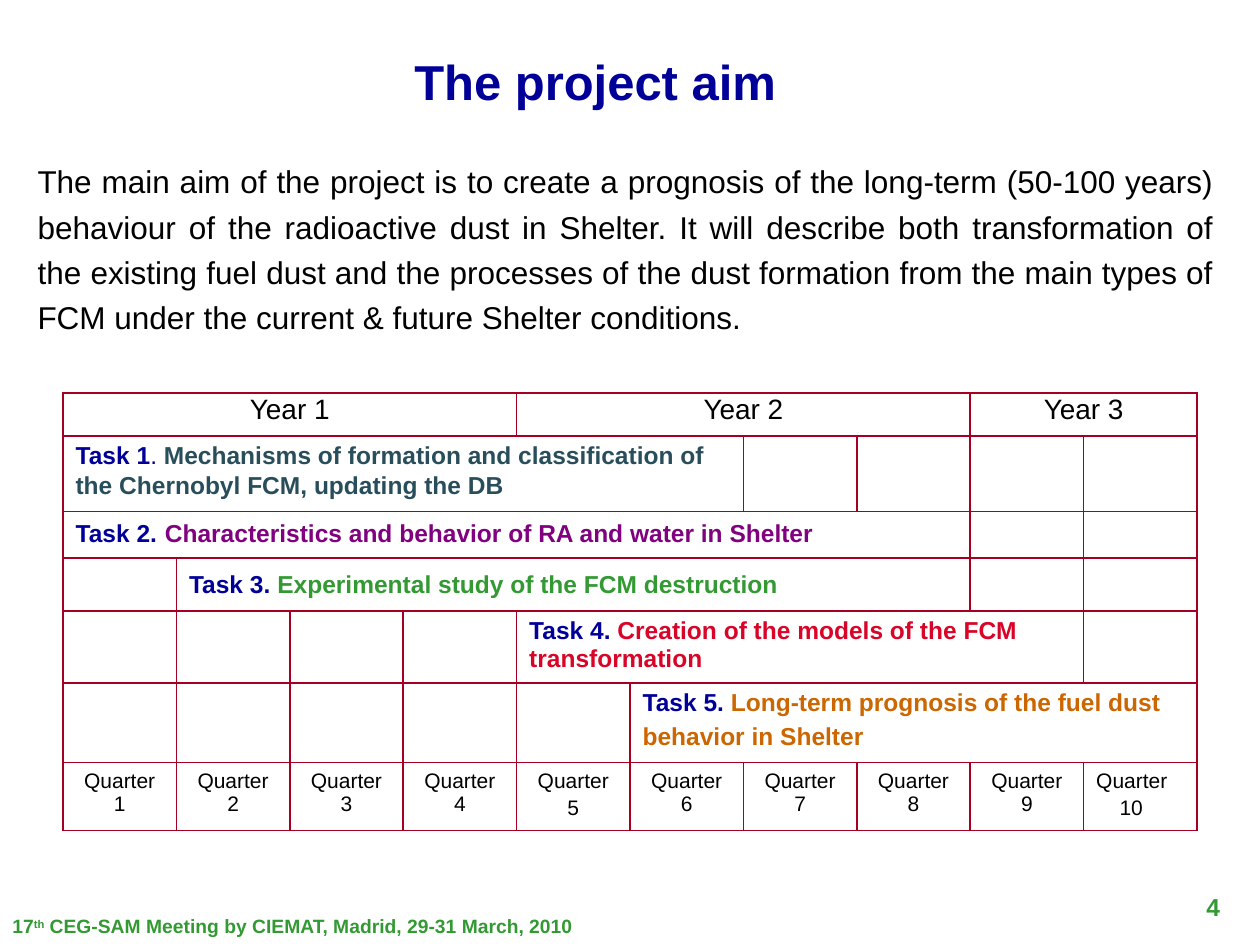
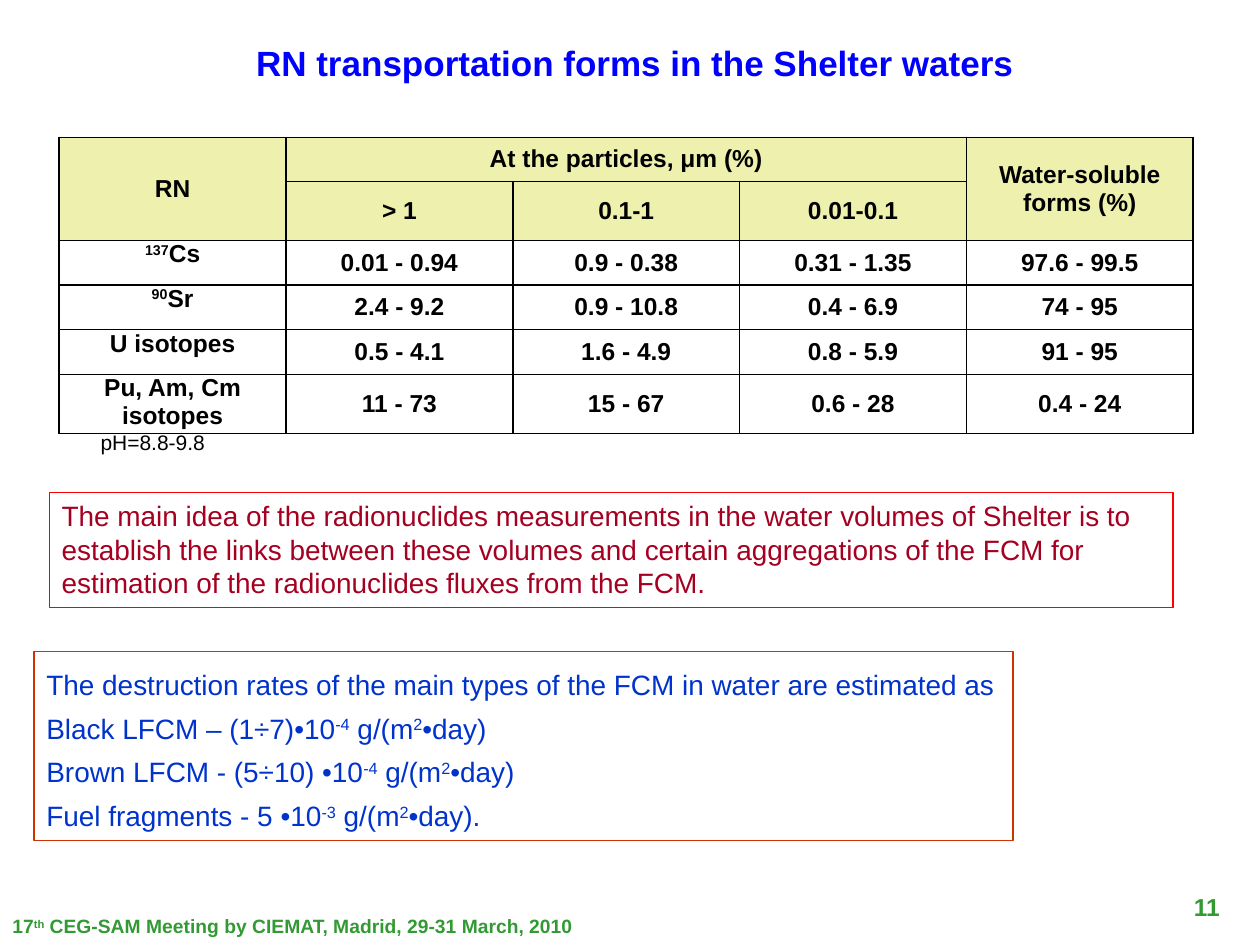
from typing import NamedTuple

from lxml import etree
from pptx import Presentation
from pptx.dml.color import RGBColor
from pptx.enum.shapes import MSO_SHAPE
from pptx.enum.text import MSO_ANCHOR, PP_ALIGN
from pptx.oxml.ns import qn
from pptx.util import Inches, Pt

RECTANGLE = MSO_SHAPE.RECTANGLE
TOP, MIDDLE = MSO_ANCHOR.TOP, MSO_ANCHOR.MIDDLE
LEFT, CENTER = PP_ALIGN.LEFT, PP_ALIGN.CENTER
RIGHT, JUSTIFY = PP_ALIGN.RIGHT, PP_ALIGN.JUSTIFY

BLACK = RGBColor(0x00, 0x00, 0x00)
NAVY = RGBColor(0x00, 0x00, 0x99)
BLUE = RGBColor(0x00, 0x00, 0xFF)
ROYAL = RGBColor(0x00, 0x33, 0xCC)
SLATE = RGBColor(0x29, 0x4E, 0x5B)
PURPLE = RGBColor(0x80, 0x00, 0x80)
GREEN = RGBColor(0x33, 0x99, 0x33)
CRIMSON = RGBColor(0xD9, 0x05, 0x28)
OCHRE = RGBColor(0xCC, 0x66, 0x00)
WINE = RGBColor(0xA5, 0x00, 0x21)
RED = RGBColor(0xFF, 0x00, 0x00)
RUST = RGBColor(0xCC, 0x33, 0x00)
CREAM = RGBColor(0xEE, 0xF0, 0xAE)

FONT = "Arial"
HAND_FONT = "Comic Neue"
UNIT = Inches(0.1)  # one column or row of the page grid
COLUMNS, ROWS = 100, 75
PARAGRAPH_GAP = 0.2  # share of the line height


class Box(NamedTuple):
    """Area of the page in grid columns and rows."""
    left: float
    top: float
    width: float
    height: float

    def area(self, left, top, width, height):
        return Box(self.left + left, self.top + top, width, height)

    def emu(self):
        return [round(length * UNIT) for length in self]


PAGE = Box(0, 0, COLUMNS, ROWS)


def space_before(paragraph, share):
    paragraph.space_before = Pt(0)
    spacing = paragraph._p.pPr.find(qn("a:spcBef"))
    spacing.remove(spacing[0])
    etree.SubElement(spacing, qn("a:spcPct")).set("val", str(round(share * 100000)))


def write(frame, paragraphs, align=LEFT, line=None, gap=None, **style):
    """Each paragraph is a string or a list of (text, style changes).

    Text between two carets is set as superscript.
    """
    for number, content in enumerate(paragraphs):
        paragraph = frame.add_paragraph() if number else frame.paragraphs[0]
        paragraph.alignment = align
        if line:
            paragraph.line_spacing = line
        if gap:
            space_before(paragraph, gap)
        pieces = [(content, {})] if isinstance(content, str) else content
        for text, changes in pieces:
            look = {"font": FONT, "size": 14, "color": BLACK, "bold": False,
                    **style, **changes}
            for index, piece in enumerate(text.split("^")):
                if not piece:
                    continue
                run = paragraph.add_run()
                run.text = piece
                run.font.name = look["font"]
                run.font.size = Pt(look["size"])
                run.font.bold = look["bold"]
                run.font.color.rgb = look["color"]
                if index % 2:
                    run.font._element.set("baseline", "30000")


def add_text(slide, box, paragraphs, wrap=True, **style):
    frame = slide.shapes.add_textbox(*box.emu()).text_frame
    frame.word_wrap = wrap
    write(frame, paragraphs, **style)


def add_framed_text(slide, box, paragraphs, outline, wrap=True, **style):
    frame_shape = slide.shapes.add_shape(RECTANGLE, *box.emu())
    frame_shape.shadow.inherit = False
    frame_shape.fill.background()
    frame_shape.line.color.rgb = outline
    frame_shape.line.width = Pt(0.75)
    frame = frame_shape.text_frame
    frame.word_wrap = wrap
    frame.vertical_anchor = TOP
    write(frame, paragraphs, **style)


def border(cell, color):
    properties = cell._tc.get_or_add_tcPr()
    for index, side in enumerate(("lnL", "lnR", "lnT", "lnB")):
        edge = etree.Element(qn(f"a:{side}"), w=str(int(Pt(1))))
        fill = etree.SubElement(edge, qn("a:solidFill"))
        etree.SubElement(fill, qn("a:srgbClr")).set("val", str(color))
        properties.insert(index, edge)


def add_grid(slide, box, columns, row_heights, line_color, inset):
    """Bordered table without fill; inset is (horizontal, vertical)."""
    table = slide.shapes.add_table(len(row_heights), columns, *box.emu()).table
    table.first_row = table.horz_banding = False
    for column in table.columns:
        column.width = round(box.width / columns * UNIT)
    for row, height in zip(table.rows, row_heights):
        row.height = round(height * UNIT)
    for cell in table.iter_cells():
        cell.fill.background()
        border(cell, line_color)
        cell.margin_left = cell.margin_right = round(inset[0] * UNIT)
        cell.margin_top = cell.margin_bottom = round(inset[1] * UNIT)
        # keeps empty cells from stretching their row
        cell.text_frame.paragraphs[0]._p.get_or_add_endParaRPr().set("sz", "1200")
    return table


def merge(table, row, column, rows=1, columns=1):
    cell = table.cell(row, column)
    if rows * columns > 1:
        cell.merge(table.cell(row + rows - 1, column + columns - 1))
    return cell


def add_footer(slide, page, number):
    add_text(slide, page.area(93, 70.3, 4.8, 3.1), [str(number)],
             align=RIGHT, color=GREEN, bold=True)
    add_text(slide, page.area(0, 72.1, 50, 2.9),
             ["17^th^ CEG-SAM Meeting by CIEMAT, Madrid, 29-31 March, 2010"],
             size=11, color=GREEN, bold=True)


def add_schedule(slide, box):
    years = [("Year 1", 0, 4), ("Year 2", 4, 4), ("Year 3", 8, 2)]
    # first quarter, quarters, line spacing, anchor, runs
    thin = {"size": 16, "bold": False}
    tasks = [
        (0, 6, None, TOP, [
            ("Task 1", {}), (". ", {"bold": False}),
            ("Mechanisms of formation and classification of the Chernobyl FCM, "
             "updating the DB", {"color": SLATE}),
            (" ", {**thin, "font": HAND_FONT})]),
        (0, 8, 0.8, MIDDLE, [
            ("Task 2.", {}), (" ", thin),
            ("Characteristics and behavior of RA and water in Shelter",
             {"color": PURPLE})]),
        (1, 7, None, MIDDLE, [
            ("Task 3. ", {}),
            ("Experimental study of the FCM destruction", {"color": GREEN})]),
        (4, 5, None, TOP, [
            ("Task 4. ", {}),
            ("Creation of the models of the FCM transformation",
             {"color": CRIMSON})]),
        (5, 5, None, TOP, [
            ("Task 5. ", {}),
            ("Long-term prognosis of the fuel dust behavior in Shelter",
             {"color": OCHRE}),
            (" ", {"size": 18, "font": HAND_FONT})]),
    ]
    quarters = 10
    table = add_grid(slide, box, quarters, [3.4, 6, 3.7, 4.2, 5.7, 6.3, 5.4],
                     WINE, inset=(1, 0.5))
    for year, first, length in years:
        write(merge(table, 0, first, columns=length).text_frame, [year],
              align=CENTER, line=0.8, gap=PARAGRAPH_GAP, size=16)
    for row, (first, length, line, anchor, runs) in enumerate(tasks, start=1):
        cell = merge(table, row, first, columns=length)
        cell.vertical_anchor = anchor
        write(cell.text_frame, [runs], line=line, gap=PARAGRAPH_GAP,
              color=NAVY, bold=True)
    split_quarters = (5, 10)  # number stands in its own paragraph
    for quarter in range(1, quarters + 1):
        label = f"Quarter {quarter}"
        lines = label.split() if quarter in split_quarters else [label]
        frame = table.cell(len(tasks) + 1, quarter - 1).text_frame
        write(frame, lines, align=LEFT if quarter == quarters else CENTER,
              gap=PARAGRAPH_GAP, size=12)
    # the last number is indented under its left-aligned label
    frame.paragraphs[-1]._p.pPr.set("marL", str(round(1.85 * UNIT)))


def add_forms_table(slide, box):
    header = [
        ("RN", 0, 0, 2, 1),
        ("At the particles, μm (%)", 0, 1, 1, 3),
        ("Water-soluble forms (%)", 0, 4, 2, 1),
        ("> 1", 1, 1, 1, 1),
        ("0.1-1", 1, 2, 1, 1),
        ("0.01-0.1", 1, 3, 1, 1),
    ]
    nuclides = [
        ("^137^Cs", "0.01 - 0.94", "0.9 - 0.38", "0.31 - 1.35", "97.6 - 99.5"),
        ("^90^Sr", "2.4 - 9.2", "0.9 - 10.8", "0.4 - 6.9", "74 - 95"),
        ("U isotopes", "0.5 - 4.1", "1.6 - 4.9", "0.8 - 5.9", "91 - 95"),
        ("Pu, Am, Cm isotopes", "11 - 73", "15 - 67", "0.6 - 28", "0.4 - 24"),
    ]
    table = add_grid(slide, box, 5, [3.5, 4.4, 3.55, 3.55, 3.55, 4.7],
                     BLACK, inset=(0, 0))

    def fill_in(cell, text, anchor=MIDDLE):
        cell.vertical_anchor = anchor
        write(cell.text_frame, [text], align=CENTER, gap=PARAGRAPH_GAP, bold=True)

    for text, row, column, rows, columns in header:
        cell = merge(table, row, column, rows, columns)
        cell.fill.solid()
        cell.fill.fore_color.rgb = CREAM
        fill_in(cell, text)
    for row, shares in enumerate(nuclides, start=2):
        for column, text in enumerate(shares):
            fill_in(table.cell(row, column), text, MIDDLE if column else TOP)


def add_aim_slide(slide, page):
    add_text(slide, page.area(31.9, 3.6, 30.8, 5.7), ["The project aim"],
             wrap=False, size=28, color=NAVY, bold=True)
    add_text(slide, page.area(2, 11.8, 95.3, 15.5), [
        "The main aim of the project is to create a prognosis of the long-term "
        "(50-100 years) behaviour of the radioactive dust in Shelter. It will "
        "describe both transformation of the existing fuel dust and the processes "
        "of the dust formation from the main types of FCM under the current & "
        "future Shelter conditions."], align=JUSTIFY, line=1.2, size=18)
    add_schedule(slide, page.area(5, 31.2, 90, 34.8))
    add_footer(slide, page, 4)


def add_forms_slide(slide, page):
    add_forms_table(slide, page.area(4.7, 10.9, 90, 23.25))
    add_framed_text(slide, page.area(3.9, 39.1, 89.2, 9.1), [
        "The main idea of the radionuclides measurements in the water volumes of "
        "Shelter is to establish the links between these volumes and certain "
        "aggregations of the FCM for estimation of the radionuclides fluxes from "
        "the FCM."], outline=RED, size=16, color=WINE)
    add_text(slide, page.area(5.9, 2.8, 89, 4.3),
             ["RN transportation forms in the Shelter waters"],
             align=CENTER, size=20, color=BLUE, bold=True)
    add_text(slide, page.area(7, 33.6, 10.4, 3), ["рН=8.8-9.8"],
             wrap=False, size=12)
    rate_unit = "g/(m^2^•day)"
    add_framed_text(slide, page.area(2.7, 51.7, 77.7, 15), [
        "The destruction rates of the main types of the FCM in water are estimated as",
        f"Black LFCM – (1÷7)•10^-4^ {rate_unit}",
        f"Brown LFCM - (5÷10) •10^-4^ {rate_unit}",
        f"Fuel fragments - 5 •10^-3^ {rate_unit}."],
        outline=RUST, wrap=False, line=1.3, size=16, color=ROYAL)
    add_footer(slide, page, 11)


def main():
    deck = Presentation()
    deck.slide_width, deck.slide_height = COLUMNS * UNIT, ROWS * UNIT
    blank = deck.slide_layouts[6]
    for build in (add_aim_slide, add_forms_slide):
        build(deck.slides.add_slide(blank), PAGE)
    deck.save("out.pptx")


if __name__ == "__main__":
    main()
